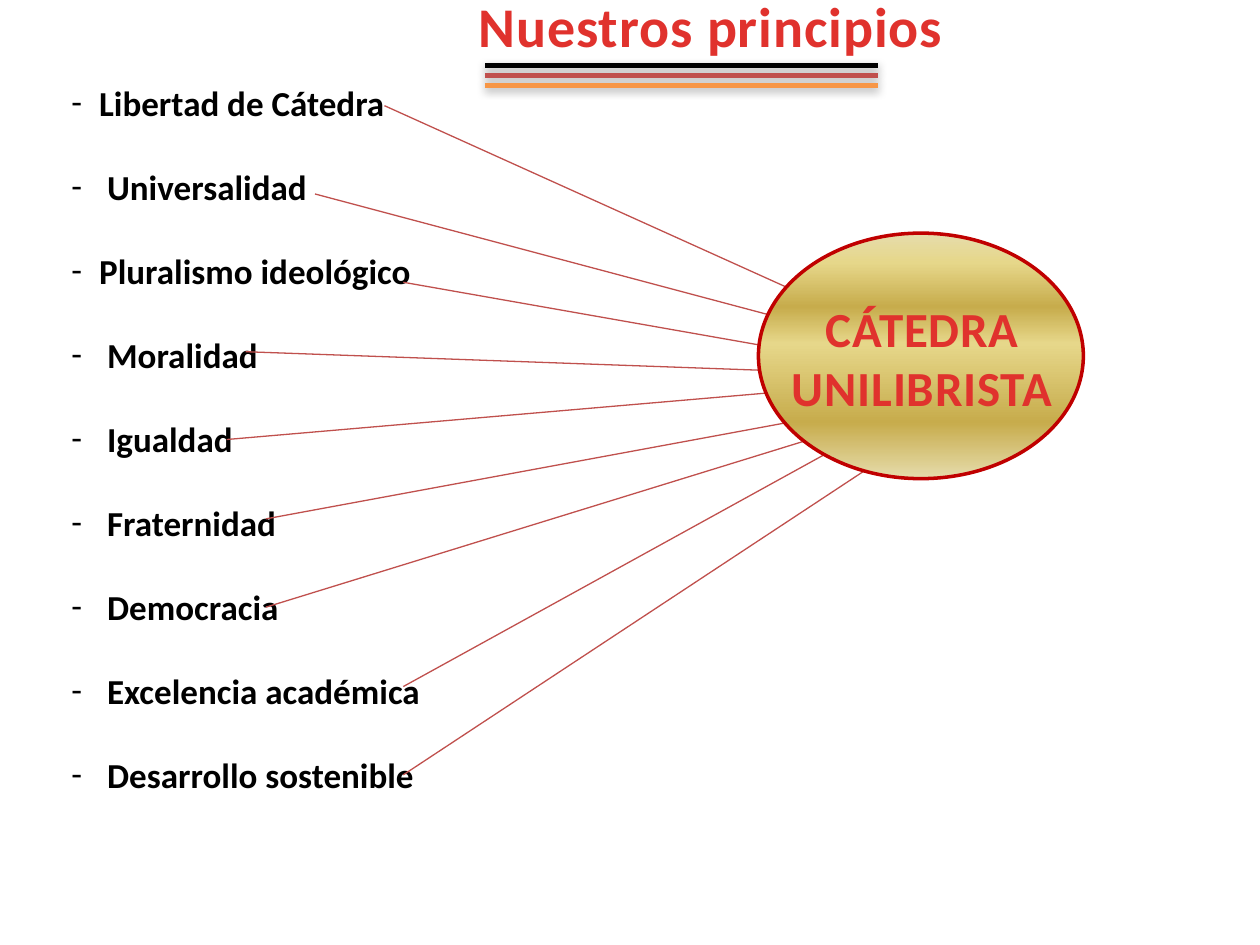
from lxml import etree
from pptx import Presentation
from pptx.dml.color import RGBColor
from pptx.enum.shapes import MSO_CONNECTOR, MSO_SHAPE
from pptx.enum.text import PP_ALIGN
from pptx.oxml import parse_xml
from pptx.oxml.ns import nsdecls, qn
from pptx.util import Cm, Pt

STRAIGHT = MSO_CONNECTOR.STRAIGHT
OVAL = MSO_SHAPE.OVAL
CENTER, JUSTIFY = PP_ALIGN.CENTER, PP_ALIGN.JUSTIFY

BLACK = RGBColor(0x00, 0x00, 0x00)
RED = RGBColor(0xE0, 0x32, 0x2D)
DARK_RED = RGBColor(0xC0, 0x00, 0x00)
BRICK = RGBColor(0xC0, 0x50, 0x4D)
ORANGE = RGBColor(0xF7, 0x96, 0x46)
PALE_GOLD = RGBColor(0xE6, 0xDC, 0xAC)
LIGHT_GOLD = RGBColor(0xE6, 0xD7, 0x8A)
DEEP_GOLD = RGBColor(0xC7, 0xAC, 0x4C)

TITLE = ["Nuestros principios"]
CENTRE = ["CÁTEDRA", "UNILIBRISTA"]

# Principle, text indent, ray start and ray end (cm)
NEAR, FAR = 0.56, 0.72
PRINCIPLES = [
    ("Libertad de Cátedra", NEAR, (7.75, 2.13), (16.08, 5.89)),
    ("Universalidad", FAR, (6.35, 3.91), (16.08, 6.5)),
    ("Pluralismo ideológico", NEAR, (8.13, 5.69), (16.08, 7.09)),
    ("Moralidad", FAR, (4.95, 7.09), (16.08, 7.49)),
    ("Igualdad", FAR, (4.57, 8.86), (16.08, 7.87)),
    ("Fraternidad", FAR, (5.36, 10.46), (16.08, 8.48)),
    ("Democracia", FAR, (5.36, 12.24), (16.87, 8.69)),
    ("Excelencia académica", FAR, (8.13, 13.84), (17.48, 8.69)),
    ("Desarrollo sostenible", FAR, (8.13, 15.62), (18.64, 8.69)),
]
GOLD_STOPS = [(0, PALE_GOLD), (12, LIGHT_GOLD), (30, DEEP_GOLD),
              (45, LIGHT_GOLD), (77, DEEP_GOLD), (100, PALE_GOLD)]
STRIPES = [BLACK, BRICK, ORANGE]
STRIPE_LEFT, STRIPE_RIGHT, STRIPE_TOP, STRIPE_STEP = 9.78, 17.7, 1.32, 0.2

LIST_FORMAT = {"name": "Calibri", "size": Pt(20), "bold": True}
TITLE_FORMAT = {**LIST_FORMAT, "size": Pt(32)}
CENTRE_FORMAT = {**LIST_FORMAT, "size": Pt(28)}

SHADOW = (
    f'<a:effectLst {nsdecls("a")}><a:outerShdw blurRad="63500" dist="22860" '
    'dir="5400000" rotWithShape="0"><a:srgbClr val="000000">'
    '<a:alpha val="35000"/></a:srgbClr></a:outerShdw></a:effectLst>'
)
NO_EFFECT = f'<a:effectLst {nsdecls("a")}/>'


def add_box(shapes, place, wrap):
    box = shapes.add_textbox(*map(Cm, place))
    box.text_frame.word_wrap = wrap
    return box.text_frame


def add_paragraph(frame, first):
    return frame.paragraphs[0] if first else frame.add_paragraph()


def add_span(para, text, values, color):
    span = para.add_run()
    span.text = text
    for name, value in values.items():
        setattr(span.font, name, value)
    span.font.color.rgb = color
    return span


def add_heading(shapes, place, lines, values):
    """Centred red lines with slightly open letter spacing."""
    frame = add_box(shapes, place, False)
    for index, text in enumerate(lines):
        para = add_paragraph(frame, index == 0)
        para.alignment = CENTER
        span = add_span(para, text, values, RED)
        span.font._element.set("spc", "50")


def add_principles(shapes, place):
    frame = add_box(shapes, place, True)
    for index, (text, indent, _, _) in enumerate(PRINCIPLES):
        para = add_paragraph(frame, index == 0)
        para.alignment = JUSTIFY
        if index:
            para.space_before = Pt(24)
        properties = para._p.get_or_add_pPr()
        properties.set("marL", str(Cm(indent)))
        properties.set("indent", str(-Cm(indent)))
        etree.SubElement(properties, qn("a:buFont"), typeface="Calibri")
        etree.SubElement(properties, qn("a:buChar"), char="-")
        add_span(para, text, LIST_FORMAT, BLACK)


def add_line(shapes, start, end, color, width, effect):
    line = shapes.add_connector(STRAIGHT, *map(Cm, start + end))
    line.line.color.rgb = color
    line.line.width = Pt(width)
    line._element.spPr.append(parse_xml(effect))


def add_gold_oval(shapes, place):
    oval = shapes.add_shape(OVAL, *map(Cm, place))
    oval.shadow.inherit = False
    oval.line.color.rgb = DARK_RED
    oval.line.width = Pt(2)
    oval.fill.gradient()
    oval.fill.gradient_angle = 270
    stops = oval._element.spPr.find(qn("a:gradFill")).find(qn("a:gsLst"))
    for stop in list(stops):
        stops.remove(stop)
    for position, color in GOLD_STOPS:
        stop = etree.SubElement(stops, qn("a:gs"), pos=str(position * 1000))
        etree.SubElement(stop, qn("a:srgbClr"), val=str(color))


def main():
    deck = Presentation()
    deck.slide_width, deck.slide_height = Cm(25.4), Cm(19.05)
    page = deck.slides.add_slide(deck.slide_layouts[6])

    add_heading(page.shapes, (9.35, -0.3, 9.96, 1.63), TITLE, TITLE_FORMAT)
    add_principles(page.shapes, (1.19, 1.52, 9.93, 14.78))

    rays = page.shapes.add_group_shape().shapes
    for _, _, start, end in PRINCIPLES:
        add_line(rays, start, end, BRICK, 0.75, NO_EFFECT)

    hub = page.shapes.add_group_shape().shapes
    add_gold_oval(hub, (15.29, 4.7, 6.55, 4.95))
    add_heading(hub, (15.67, 5.89, 5.84, 2.64), CENTRE, CENTRE_FORMAT)

    underline = page.shapes.add_group_shape().shapes
    for index, color in enumerate(STRIPES):
        y = STRIPE_TOP + index * STRIPE_STEP
        add_line(underline, (STRIPE_LEFT, y), (STRIPE_RIGHT, y), color, 3, SHADOW)

    deck.save("out.pptx")


if __name__ == "__main__":
    main()
